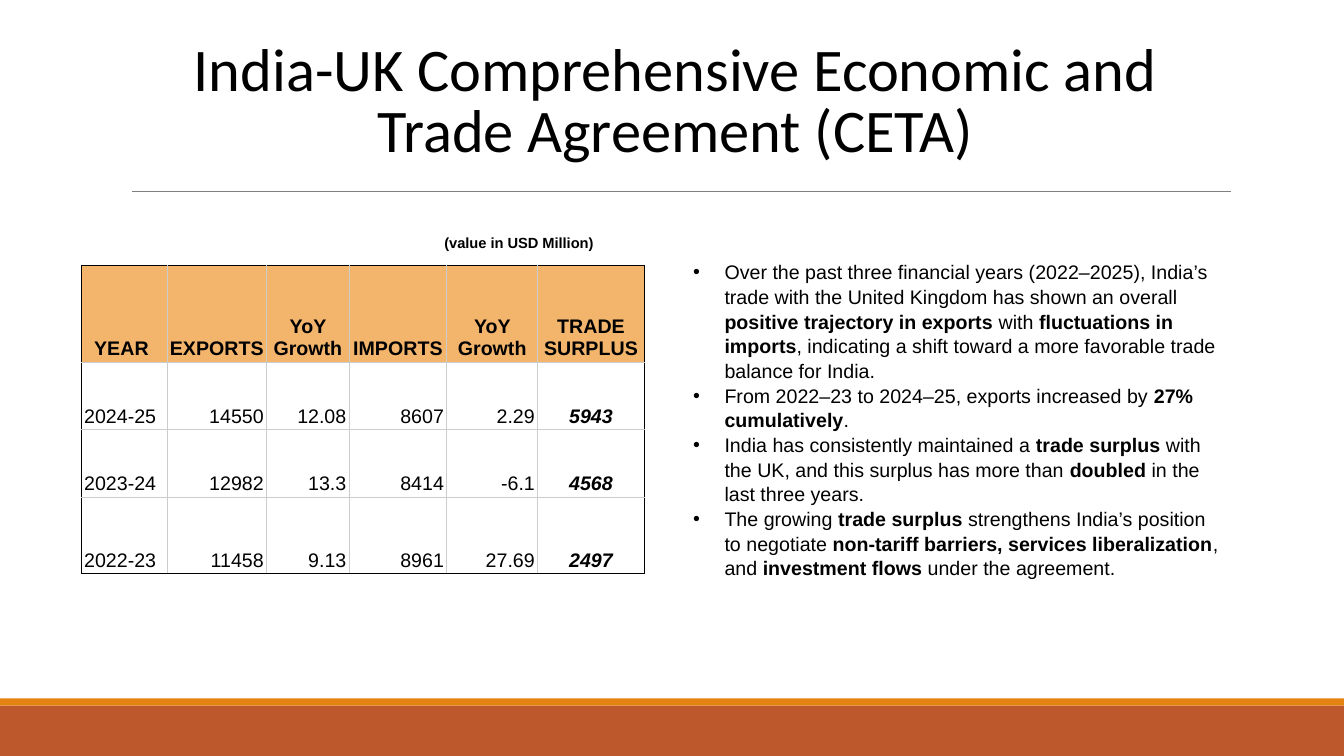
import pptx
import pptx.util
import pptx.dml.color
import pptx.enum.shapes
import pptx.enum.text
import pptx.oxml
import pptx.oxml.ns
from lxml import etree

Cm = pptx.util.Cm
Pt = pptx.util.Pt
Align = pptx.enum.text.PP_ALIGN
Anchor = pptx.enum.text.MSO_ANCHOR
qn = pptx.oxml.ns.qn

HUES = {
    "black": "000000",
    "rust": "BD582C",
    "orange": "E48312",
    "peach": "F3B56C",
    "rule": "7F7F7F",
    "grid": "CCCCCC",
}

COLS = [2.16, 2.51, 2.08, 2.46, 2.29, 2.69]
ROWS = [2.44, 1.7, 1.7, 1.93]
TRADE = [
    ["YEAR ", "EXPORTS ", "YoY Growth", "IMPORTS ", "YoY Growth", "TRADE SURPLUS"],
    ["2024-25", "14550", "12.08", "8607", "2.29", "5943"],
    ["2023-24", "12982", "13.3", "8414", "-6.1", "4568"],
    ["2022-23", "11458", "9.13", "8961", "27.69", "2497"],
]

POINTS = [
    [
        ("Over the past three financial years (2022–2025), India’s trade with the United Kingdom has shown an overall ", False),
        ("positive trajectory in exports", True),
        (" with ", False),
        ("fluctuations in imports", True),
        (", indicating a shift toward a more favorable trade balance for India.", False),
    ],
    [
        ("From 2022–23 to 2024–25, exports increased by ", False),
        ("27% cumulatively", True),
        (".", False),
    ],
    [
        ("India has consistently maintained a ", False),
        ("trade surplus", True),
        (" with the UK, and this surplus has more than ", False),
        ("doubled", True),
        (" in the last three years.", False),
    ],
    [
        ("The growing ", False),
        ("trade surplus", True),
        (" strengthens India’s position to negotiate ", False),
        ("non-tariff barriers, services liberalization", True),
        (", and ", False),
        ("investment flows", True),
        (" under the agreement.", False),
    ],
]


def hue(name):
    return pptx.dml.color.RGBColor.from_string(HUES[name])


def add_run(para, text, size, font="Arial", bold=False, slant=False):
    run = para.add_run()
    run.text = text
    run.font.size = Pt(size)
    run.font.name = font
    run.font.bold = bold
    run.font.italic = slant
    run.font.color.rgb = hue("black")


def add_band(slide, top, height, name):
    band = slide.shapes.add_shape(
        pptx.enum.shapes.MSO_SHAPE.RECTANGLE, 0, Cm(top), Cm(33.87), Cm(height))
    band.shadow.inherit = False
    band.fill.solid()
    band.fill.fore_color.rgb = hue(name)
    band.line.fill.background()


def add_rule(slide, left, right, top):
    rule = slide.shapes.add_connector(
        pptx.enum.shapes.MSO_CONNECTOR.STRAIGHT, Cm(left), Cm(top), Cm(right), Cm(top))
    rule.line.color.rgb = hue("rule")
    rule.line.width = Pt(0.75)
    etree.SubElement(rule._element.spPr, qn("a:effectLst"))


def set_title(slide, text):
    title = slide.shapes.title
    title.left, title.top, title.width, title.height = Cm(3.05), Cm(0.79), Cm(27.94), Cm(3.5)
    frame = title.text_frame
    frame.vertical_anchor = Anchor.BOTTOM
    frame.word_wrap = True
    para = frame.paragraphs[0]
    para.alignment = Align.CENTER
    para.line_spacing = 0.85
    add_run(para, text, 43.2, "Calibri")


def add_box(slide, left, top, width, height):
    box = slide.shapes.add_textbox(Cm(left), Cm(top), Cm(width), Cm(height))
    box.text_frame.word_wrap = True
    return box.text_frame


def add_list(slide, points):
    frame = add_box(slide, 17.22, 6.4, 13.77, 8.03)
    for i, point in enumerate(points):
        para = frame.add_paragraph() if i else frame.paragraphs[0]
        para.line_spacing = 1.05
        props = para._p.get_or_add_pPr()
        props.set("marL", str(Cm(0.79)))
        props.set("indent", str(-Cm(0.79)))
        etree.SubElement(props, qn("a:buFont")).set("typeface", "Arial")
        etree.SubElement(props, qn("a:buChar")).set("char", "•")
        for text, bold in point:
            add_run(para, text, 14, bold=bold)


def add_edge(cell, side, name):
    edge = etree.SubElement(cell._tc.get_or_add_tcPr(), qn("a:" + side))
    edge.set("w", str(Pt(0.6)))
    fill = etree.SubElement(edge, qn("a:solidFill"))
    etree.SubElement(fill, qn("a:srgbClr")).set("val", HUES[name])


def fill_cell(cell, text, row, col):
    last = len(COLS) - 1
    outer = {
        "lnL": col == 0,
        "lnR": col == last,
        "lnT": row == 0,
        "lnB": row == len(ROWS) - 1,
    }
    for side, rim in outer.items():
        add_edge(cell, side, "black" if rim else "grid")
    if row == 0:
        cell.fill.solid()
        cell.fill.fore_color.rgb = hue("peach")
    else:
        cell.fill.background()
    cell.margin_left = cell.margin_right = Cm(0.07)
    cell.margin_top = cell.margin_bottom = Cm(0.05)
    cell.vertical_anchor = Anchor.BOTTOM
    para = cell.text_frame.paragraphs[0]
    if row == 0 or col == last:
        para.alignment = Align.CENTER
    else:
        para.alignment = Align.RIGHT if col else Align.LEFT
    add_run(para, text, 14, bold=row == 0 or col == last, slant=row > 0 and col == last)


def add_grid(slide, data):
    table = slide.shapes.add_table(
        len(ROWS), len(COLS), Cm(2.05), Cm(6.68), Cm(sum(COLS)), Cm(sum(ROWS))).table
    table.first_row = False
    table.horz_banding = False
    for col, width in zip(table.columns, COLS):
        col.width = Cm(width)
    for r, line in enumerate(data):
        table.rows[r].height = Cm(ROWS[r])
        for c, text in enumerate(line):
            fill_cell(table.cell(r, c), text, r, c)


def main():
    deck = pptx.Presentation()
    deck.slide_width, deck.slide_height = Cm(33.87), Cm(19.05)
    slide = deck.slides.add_slide(deck.slide_layouts[5])
    add_band(slide, 17.78, 1.27, "rust")
    add_band(slide, 17.6, 0.18, "orange")
    add_rule(slide, 3.33, 31.01, 4.83)
    set_title(slide, "India-UK Comprehensive Economic and Trade Agreement (CETA)")
    add_grid(slide, TRADE)
    add_list(slide, POINTS)
    note = add_box(slide, 10.95, 5.77, 5.99, 0.74)
    add_run(note.paragraphs[0], "(value in USD Million)", 10.5, bold=True)
    deck.save("out.pptx")


if __name__ == "__main__":
    main()
